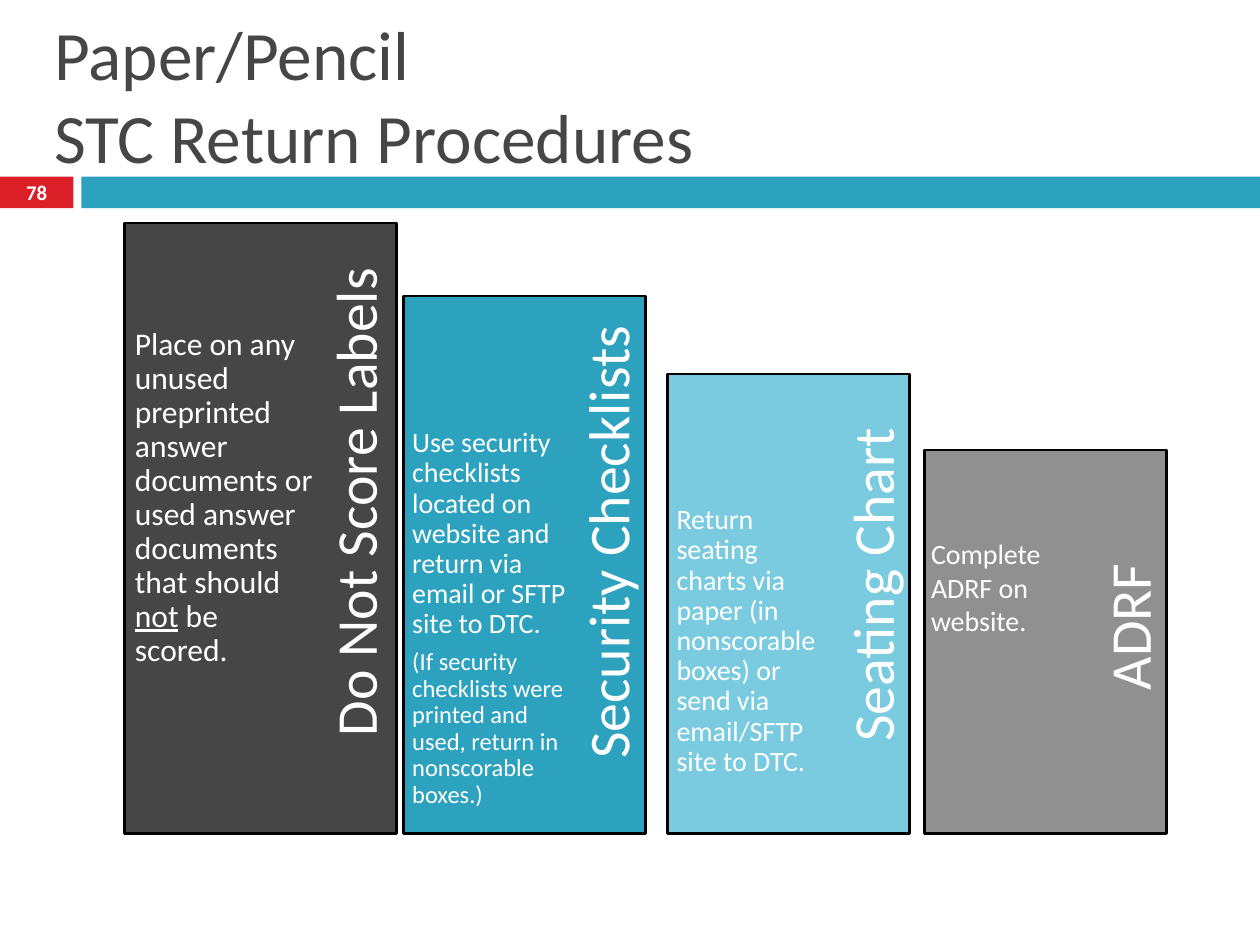
import pptx
import pptx.dml.color
import pptx.enum.text
import pptx.enum.shapes
import pptx.util
from pptx.util import Cm

THEME = {
    "font": "Calibri",
    "red": "DA1F28", "teal": "2DA2BF", "sky": "7ACBE0",
    "grey": "909090", "dark": "464646", "white": "FFFFFF", "black": "000000",
    "title": 39.6, "label": 33, "number": 11.9,
    "note_large": 18, "note": 16, "note_small": 14,
}
RECTANGLE = pptx.enum.shapes.MSO_SHAPE.RECTANGLE
MIDDLE = pptx.enum.text.MSO_ANCHOR.MIDDLE
CENTER = pptx.enum.text.PP_ALIGN.CENTER


def add_bar(page, left, top, width, height, color):
    """Add a flat rectangle without an outline."""
    bar = page.shapes.add_shape(RECTANGLE, left, top, width, height)
    bar.shadow.inherit = False
    bar.fill.solid()
    bar.fill.fore_color.rgb = pptx.dml.color.RGBColor.from_string(THEME[color])
    bar.line.fill.background()
    return bar


def style_runs(para, size, color="white"):
    for span in para.runs:
        span.font.name = THEME["font"]
        span.font.size = pptx.util.Pt(THEME[size])
        span.font.color.rgb = pptx.dml.color.RGBColor.from_string(THEME[color])


deck = pptx.Presentation()
deck.slide_width, deck.slide_height = Cm(25.4), Cm(19.05)
page = deck.slides.add_slide(deck.slide_layouts[5])

# Header band with the page number
band_top, band_height = Cm(3.56), Cm(0.64)
add_bar(page, Cm(0), band_top, Cm(1.48), band_height, "red")
add_bar(page, Cm(1.64), band_top, Cm(23.76), band_height, "teal")

title = page.shapes.title
title.left, title.top, title.width, title.height = Cm(0.84), Cm(0.84), Cm(23.7), Cm(2.12)
title.text_frame.text = "Paper/Pencil\vSTC Return Procedures"
title.text_frame.vertical_anchor = MIDDLE
title.text_frame.auto_size = pptx.enum.text.MSO_AUTO_SIZE.NONE
title.text_frame.paragraphs[0].alignment = pptx.enum.text.PP_ALIGN.LEFT
style_runs(title.text_frame.paragraphs[0], "title", "dark")

number = page.shapes.add_textbox(Cm(0), Cm(3.53), Cm(1.48), Cm(0.69))
number.text_frame.text = "78"
number.text_frame.vertical_anchor = MIDDLE
number.text_frame.word_wrap = True
number.text_frame.paragraphs[0].alignment = CENTER
style_runs(number.text_frame.paragraphs[0], "number")
number.text_frame.paragraphs[0].runs[0].font.bold = True

# Each step: label, color, left, top, width, note left, note top, line spacing,
# then note paragraphs as (size, spans); every second span is underlined
steps = [
    ("Do Not Score Labels", "dark", 2.51, 4.5, 5.49, 2.54, 6.43, 0.9, [
        ("note_large", ["Place on any unused preprinted answer documents or used "
                        "answer documents that should ", "not", " be scored."])]),
    ("Security Checklists", "teal", 8.13, 5.97, 4.88, 8.13, 8.46, 0.9, [
        ("note", ["Use security checklists located on website and return via "
                  "email or SFTP site to DTC."]),
        ("note_small", ["(If security checklists were printed and used, return in "
                        "nonscorable boxes.)"])]),
    ("Seating Chart", "sky", 13.46, 7.54, 4.88, 13.46, 10.01, 0.9, [
        ("note", ["Return seating charts via paper (in nonscorable boxes) or "
                  "send via email/SFTP site to DTC."])]),
    ("ADRF", "grey", 18.64, 9.07, 4.88, 18.59, 10.64, 1.0, [
        ("note", ["Complete ADRF on website."])]),
]
floor = 16.81

for name, color, left, top, width, note_left, note_top, spacing, notes in steps:
    height = floor - top
    column = add_bar(page, Cm(left), Cm(top), Cm(width), Cm(height), color)
    column.line.color.rgb = pptx.dml.color.RGBColor.from_string(THEME["black"])
    column.line.width = pptx.util.Pt(1.5)

    # The label is turned upright against the right edge, over the top 90 %
    length, depth = 0.9 * height, 0.26 * width
    center_x, center_y = left + width - depth / 2, top + length / 2
    label = page.shapes.add_textbox(Cm(center_x - length / 2), Cm(center_y - depth / 2),
                                    Cm(length), Cm(depth))
    label.rotation = 270
    frame = label.text_frame
    frame.text = name
    frame.word_wrap = True
    frame.vertical_anchor = MIDDLE
    frame.margin_left, frame.margin_right = Cm(0.36), Cm(0.53)
    frame.margin_top, frame.margin_bottom = Cm(0), Cm(0.13)
    frame.paragraphs[0].alignment = CENTER
    frame.paragraphs[0].line_spacing = 0.9
    style_runs(frame.paragraphs[0], "label")

    note = page.shapes.add_textbox(Cm(note_left), Cm(note_top),
                                   Cm(0.72 * width), Cm(floor - note_top))
    frame = note.text_frame
    frame.word_wrap = True
    frame.margin_left = frame.margin_right = Cm(0.18)
    frame.margin_top = frame.margin_bottom = Cm(0.18)
    for index, (size, spans) in enumerate(notes):
        para = frame.add_paragraph() if index else frame.paragraphs[0]
        para.line_spacing = spacing
        para.space_after = pptx.util.Pt(5.5)
        for position, words in enumerate(spans):
            span = para.add_run()
            span.text = words
            if position % 2:
                span.font.underline = True
        style_runs(para, size)

deck.save("out.pptx")
